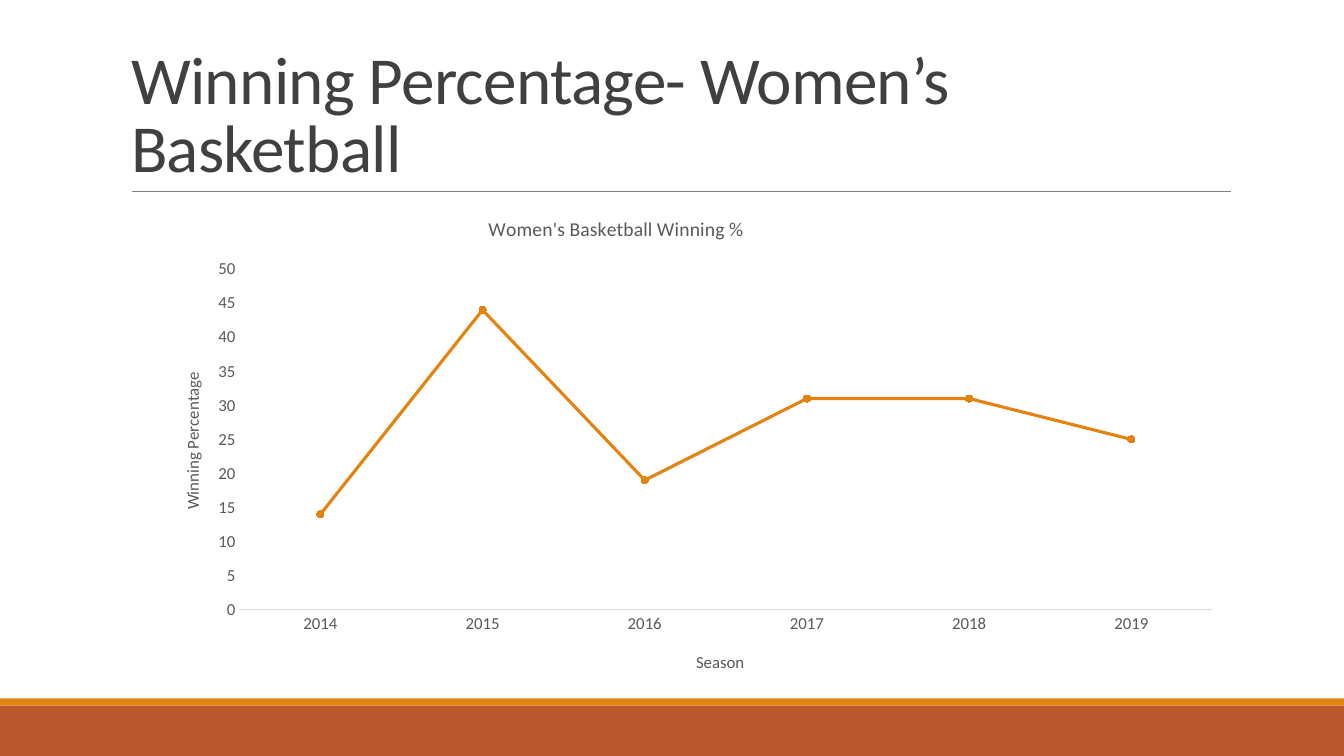
from dataclasses import dataclass

from lxml.etree import SubElement
from pptx import Presentation
from pptx.chart.data import CategoryChartData
from pptx.dml.color import RGBColor
from pptx.enum.chart import XL_CHART_TYPE, XL_MARKER_STYLE, XL_TICK_MARK
from pptx.enum.shapes import MSO_CONNECTOR, MSO_SHAPE
from pptx.enum.text import MSO_ANCHOR, MSO_AUTO_SIZE, PP_ALIGN
from pptx.oxml import parse_xml
from pptx.oxml.ns import nsdecls, qn
from pptx.util import Inches, Pt

WIDTH, HEIGHT = 13.33, 7.5
FONT = "Calibri"
ORANGE, RUST, GREY = "E48312", "BD582C", "595959"
SEASONS = ("2014", "2015", "2016", "2017", "2018", "2019")
WINNING = (14, 44, 19, 31, 31, 25)


@dataclass
class Band:
    """Footer band, in shares of the slide's height."""
    top: float
    height: float
    color: str


@dataclass
class Caption:
    """Chart caption, placed in shares of the chart's size."""
    owner: object
    text: str
    size: int
    x: float
    y: float


BANDS = (Band(7 / HEIGHT, 0.5 / HEIGHT, RUST),
         Band(6.93 / HEIGHT, 0.07 / HEIGHT, ORANGE))


def rgb(color: str) -> RGBColor:
    return RGBColor.from_string(color)


def across(share: float) -> int:
    return Inches(WIDTH * share)


def down(share: float) -> int:
    return Inches(HEIGHT * share)


def draw_band(slide, band: Band) -> None:
    strip = slide.shapes.add_shape(MSO_SHAPE.RECTANGLE, 0, down(band.top),
                                   across(1), down(band.height))
    strip.shadow.inherit = False
    strip.fill.solid()
    strip.fill.fore_color.rgb = rgb(band.color)
    strip.line.fill.background()


def layout(**shares: object):
    """Manual chart layout, with children in the order given."""
    children = "".join(f'<c:{tag} val="{value}"/>' for tag, value in shares.items())
    return parse_xml(f'<c:layout {nsdecls("c")}><c:manualLayout>{children}'
                     '</c:manualLayout></c:layout>')


def draw_caption(caption: Caption) -> None:
    title = caption.owner
    title.text_frame.text = caption.text
    font = title.text_frame.paragraphs[0].font
    font.name, font.size, font.bold = FONT, Pt(caption.size), False
    font.color.rgb = rgb(GREY)
    element = title._element
    for old in element.findall(qn("c:layout")):
        element.remove(old)
    element.find(qn("c:tx")).addnext(
        layout(xMode="edge", yMode="edge", x=caption.x, y=caption.y))


def draw_heading(slide) -> None:
    heading = slide.shapes.title
    heading.left, heading.top = across(1.2 / WIDTH), down(0.31 / HEIGHT)
    heading.width, heading.height = across(11 / WIDTH), down(1.59 / HEIGHT)
    frame = heading.text_frame
    frame.text = "Winning Percentage- Women’s Basketball"
    frame.word_wrap = True
    frame.auto_size = MSO_AUTO_SIZE.NONE
    frame.vertical_anchor = MSO_ANCHOR.BOTTOM
    line = frame.paragraphs[0]
    line.alignment, line.line_spacing = PP_ALIGN.LEFT, 0.85
    line.font.name, line.font.size = FONT, Pt(48)
    line.font.color.rgb = rgb("404040")
    line.runs[0].font._element.set("spc", "-50")


def draw_rule(slide) -> None:
    y = down(1.9 / HEIGHT)
    rule = slide.shapes.add_connector(MSO_CONNECTOR.STRAIGHT, across(1.31 / WIDTH), y,
                                      across(12.21 / WIDTH), y)
    rule.line.color.rgb = rgb("808080")
    rule.line.width = Pt(0.5)
    SubElement(rule._element.spPr, qn("a:effectLst"))


def draw_chart(slide) -> None:
    data = CategoryChartData()
    data.categories = SEASONS
    data.add_series("Series 1", WINNING)
    chart = slide.shapes.add_chart(
        XL_CHART_TYPE.LINE_MARKERS, across(1.33 / WIDTH), down(1.9 / HEIGHT),
        across(10.87 / WIDTH), down(5.03 / HEIGHT), data).chart
    chart.has_legend = False
    chart.font.name, chart.font.size = FONT, Pt(10)
    chart.plots[0].vary_by_categories = False

    # Axes
    seasons, percentage = chart.category_axis, chart.value_axis
    for axis in (seasons, percentage):
        axis.major_tick_mark = axis.minor_tick_mark = XL_TICK_MARK.NONE
        axis.has_major_gridlines = False
        labels = axis.tick_labels.font
        labels.name, labels.size = FONT, Pt(12)
        labels.color.rgb = rgb(GREY)
    seasons.format.line.color.rgb = rgb("D9D9D9")
    seasons.format.line.width = Pt(0.75)
    percentage.format.line.fill.background()
    percentage.minimum_scale, percentage.maximum_scale = 0, 50
    percentage.major_unit = 5

    # Captions
    for caption in (
            Caption(chart.chart_title, "Women's Basketball Winning %", 14, 0.32, 0.04),
            Caption(seasons.axis_title, "Season", 12, 0.51, 0.9),
            Caption(percentage.axis_title, "Winning Percentage", 12, 0.04, 0.35)):
        draw_caption(caption)
    turned = percentage.axis_title.text_frame._txBody.find(qn("a:bodyPr"))
    turned.set("rot", "-5400000")
    turned.set("vert", "horz")

    # Winning line
    winning = chart.plots[0].series[0]
    winning.smooth = False
    winning.format.line.color.rgb = rgb(ORANGE)
    winning.format.line.width = Pt(2.25)
    marker = winning.marker
    marker.style, marker.size = XL_MARKER_STYLE.CIRCLE, 5
    marker.format.fill.solid()
    marker.format.fill.fore_color.rgb = rgb(ORANGE)
    marker.format.line.color.rgb = rgb(ORANGE)

    # Plot area
    area = chart._chartSpace.chart.plotArea
    for old in area.findall(qn("c:layout")):
        area.remove(old)
    area.insert(0, layout(layoutTarget="inner", xMode="edge", yMode="edge",
                          x=0.096, y=0.153, w=0.888, h=0.672))


def main() -> None:
    deck = Presentation()
    deck.slide_width, deck.slide_height = across(1), down(1)
    slide = deck.slides.add_slide(deck.slide_layouts[5])
    for band in BANDS:
        draw_band(slide, band)
    draw_rule(slide)
    draw_heading(slide)
    draw_chart(slide)
    deck.save("out.pptx")


if __name__ == "__main__":
    main()
